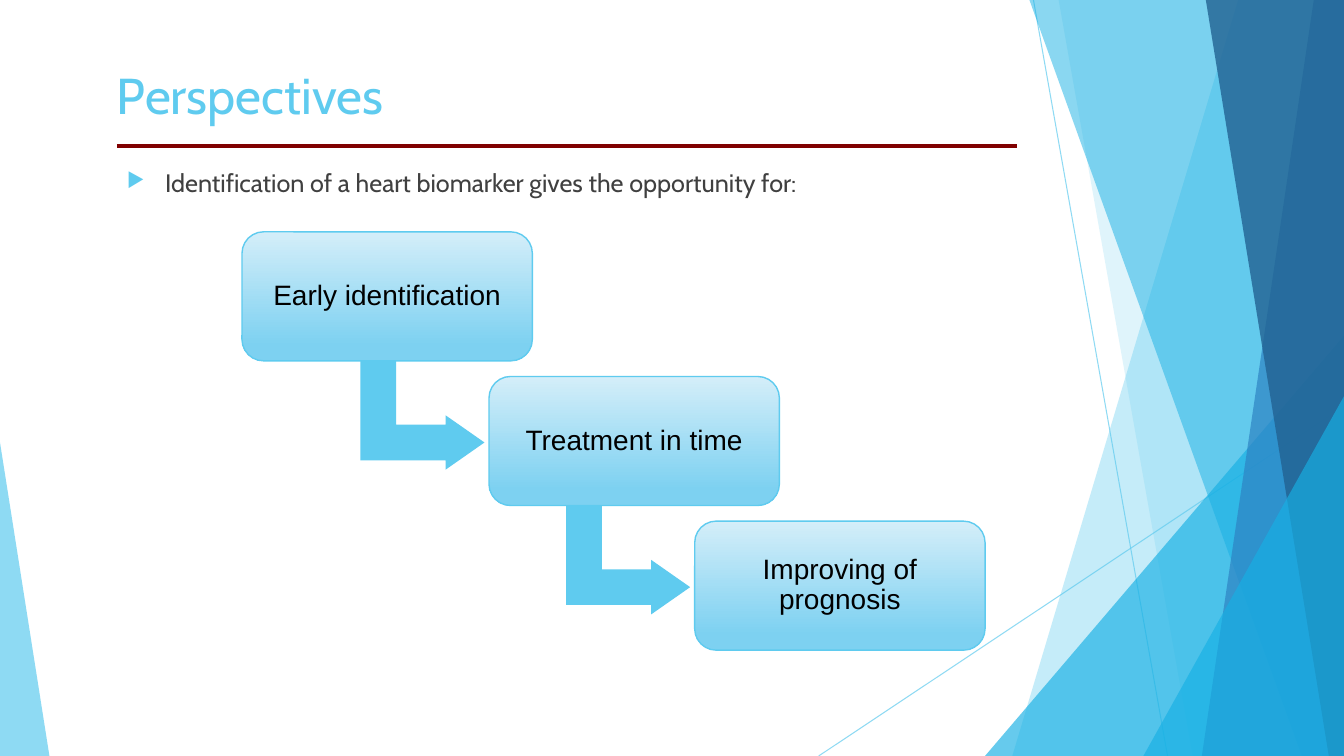
import pptx
import pptx.dml.color
import pptx.enum.dml
import pptx.enum.shapes
import pptx.enum.text
import pptx.oxml
import pptx.oxml.ns
import pptx.util

Inches = pptx.util.Inches
Pt = pptx.util.Pt
SHAPE = pptx.enum.shapes.MSO_SHAPE
ALIGN = pptx.enum.text.PP_ALIGN
ANCHOR = pptx.enum.text.MSO_ANCHOR
qn = pptx.oxml.ns.qn

WIDTH, HEIGHT = 13.33, 7.5
COLORS = {
    "sky": "5FCBEF",
    "cyan": "17B0E4",
    "blue": "2E83C3",
    "navy": "226292",
    "card_top": "D4EEF9",
    "card_bottom": "7DD1F1",
    "rule": "800000",
    "body": "404040",
    "black": "000000",
}


def rgb(name):
    return pptx.dml.color.RGBColor.from_string(COLORS[name])


def add_child(parent, tag, **attrs):
    child = parent.makeelement(qn(tag), attrs)
    parent.append(child)
    return child


def set_alpha(sp, percent):
    for color in sp._element.spPr.iter(qn("a:srgbClr")):
        add_child(color, "a:alpha", val=str(percent * 1000))


def paint(sp, color, alpha=100):
    sp.shadow.inherit = False
    sp.fill.solid()
    sp.fill.fore_color.rgb = rgb(color)
    sp.line.fill.background()
    if alpha < 100:
        set_alpha(sp, alpha)


def add_line(s, x1, y1, x2, y2, color, width, alpha=100):
    line = s.shapes.add_connector(
        pptx.enum.shapes.MSO_CONNECTOR.STRAIGHT,
        Inches(x1), Inches(y1), Inches(x2), Inches(y2))
    line.line.color.rgb = rgb(color)
    line.line.width = Pt(width)
    if alpha < 100:
        set_alpha(line, alpha)
    add_child(line._element.spPr, "a:effectLst")


def add_facet(s, top_x, bottom_x, color, alpha):
    builder = s.shapes.build_freeform(Inches(top_x), 0)
    builder.add_line_segments([
        (Inches(WIDTH), 0),
        (Inches(WIDTH), Inches(HEIGHT)),
        (Inches(bottom_x), Inches(HEIGHT)),
    ])
    paint(builder.convert_to_shape(), color, alpha)


def add_corner(s, x, width, height, apex, color, alpha):
    sp = s.shapes.add_shape(SHAPE.ISOSCELES_TRIANGLE, Inches(x), Inches(HEIGHT - height),
                            Inches(width), Inches(height))
    sp.adjustments[0] = apex
    paint(sp, color, alpha)


def add_backdrop(s):
    add_line(s, 10.25, 0, 11.58, HEIGHT, "sky", 0.75, 70)
    add_line(s, WIDTH, 4.03, 8.12, HEIGHT, "sky", 0.75, 70)
    add_facet(s, 12.28, 10.04, "sky", 36)
    add_facet(s, 10.5, 11.83, "sky", 20)
    add_corner(s, 9.77, 3.56, 4.17, 1, "cyan", 66)
    add_facet(s, 10.21, 12.91, "cyan", 50)
    add_facet(s, 13.03, 11.92, "blue", 70)
    add_facet(s, 11.96, 13.18, "navy", 80)
    add_corner(s, 11.34, 1.99, 3.57, 1, "cyan", 66)
    add_corner(s, 0, 0.49, 3.11, 0, "sky", 70)


def format_run(p, font, size, color):
    r = p.runs[0]
    r.font.name = font
    r.font.size = Pt(size)
    r.font.color.rgb = rgb(color)


def add_text(s, x, y, w, h, text):
    tf = s.shapes.add_textbox(Inches(x), Inches(y), Inches(w), Inches(h)).text_frame
    tf.word_wrap = True
    tf.text = text
    return tf


def set_insets(tf, inset):
    tf.margin_left = tf.margin_right = tf.margin_top = tf.margin_bottom = Inches(inset)


def add_title(s, x, y, w, h, text):
    tf = add_text(s, x, y, w, h, text)
    tf.vertical_anchor = ANCHOR.MIDDLE
    set_insets(tf, 0)
    format_run(tf.paragraphs[0], "Cabin", 36, "sky")
    add_line(s, x, y + 1.03, x + 8.93, y + 1.03, "rule", 2.83)


def add_bullet(s, x, y, w, h, text):
    p = add_text(s, x, y, w, h, text).paragraphs[0]
    pPr = p._p.get_or_add_pPr()
    pPr.set("marL", str(Inches(0.38)))
    pPr.set("indent", str(-Inches(0.38)))
    add_child(add_child(pPr, "a:buClr"), "a:srgbClr", val=COLORS["sky"])
    add_child(pPr, "a:buSzPct", val="80000")
    add_child(pPr, "a:buChar", char="▶")
    format_run(p, "Cabin", 18, "body")


def add_card(s, x, y, w, h, text):
    sp = s.shapes.add_shape(SHAPE.ROUNDED_RECTANGLE, Inches(x), Inches(y), Inches(w), Inches(h))
    sp.shadow.inherit = False
    sp.fill.gradient()
    sp.fill.gradient_angle = 270
    stops = zip(sp.fill.gradient_stops, ("card_top", "card_bottom"), (0, 0.88))
    for stop, color, position in stops:
        stop.color.rgb = rgb(color)
        stop.position = position
    sp.line.color.rgb = rgb("sky")
    sp.line.width = Pt(1)
    tf = sp.text_frame
    tf.word_wrap = True
    tf.vertical_anchor = ANCHOR.MIDDLE
    set_insets(tf, 0.08)
    tf.text = text
    p = tf.paragraphs[0]
    p.alignment = ALIGN.CENTER
    p.line_spacing = 0.9
    format_run(p, "Arial", 20, "black")


def add_step_arrow(s, x, y):
    sp = s.shapes.add_shape(SHAPE.BENT_UP_ARROW, Inches(x), Inches(y), Inches(1.08), Inches(1.23))
    sp.rotation = 90
    for i, value in enumerate((0.328, 0.25, 0.358)):
        sp.adjustments[i] = value
    paint(sp, "sky")


def add_steps(s, x, y):
    steps = [(0, "Early identification"), (2.45, "Treatment in time"),
             (4.49, "Improving of prognosis")]
    for i, (dx, text) in enumerate(steps):
        left, top = x + dx, y + i * 1.435
        if i:
            add_step_arrow(s, left - 1.2, top - 0.23)
        add_card(s, left, top, 2.88, 1.28, text)


def main():
    prs = pptx.Presentation()
    prs.slide_width, prs.slide_height = Inches(WIDTH), Inches(HEIGHT)
    s = prs.slides.add_slide(prs.slide_layouts[6])
    add_backdrop(s)
    add_steps(s, 2.4, 2.3)
    add_bullet(s, 1.16, 1.61, 9.4, 0.59,
               "Identification of a heart biomarker gives the opportunity for:")
    add_title(s, 1.16, 0.42, 8.44, 1.04, "Perspectives")
    prs.save("out.pptx")


if __name__ == "__main__":
    main()
